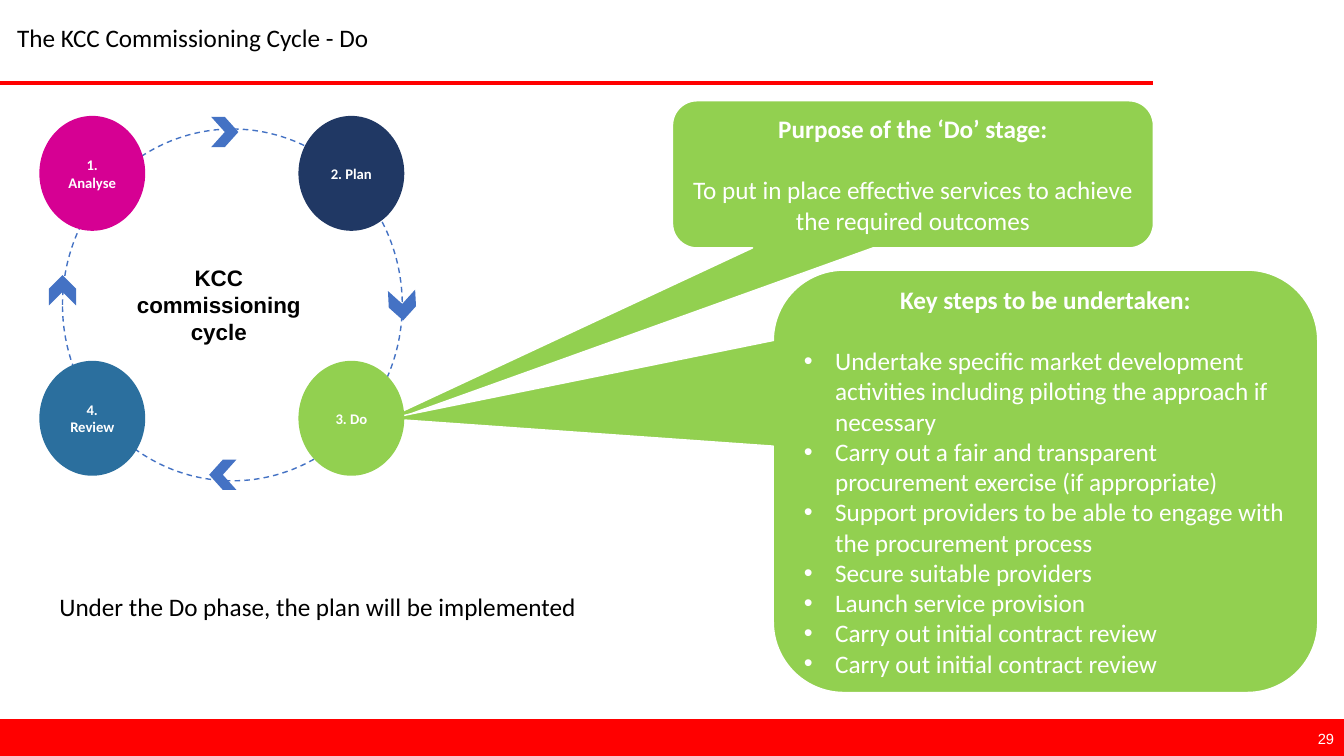
from pptx import Presentation
from pptx import util as u
from pptx.dml import color
from pptx.enum import dml, shapes, text
from pptx.oxml import ns
from lxml import etree

RED, GREEN, BLUE, WHITE, BLACK = "FF0000", "92D050", "4472C4", "FFFFFF", "000000"
KIND = shapes.MSO_SHAPE
ALIGN = text.PP_ALIGN
MID = text.MSO_ANCHOR.MIDDLE


def rgb(code):
    return color.RGBColor.from_string(code)


def inches(*nums):
    return [u.Inches(n) for n in nums]


def add_form(slide, kind, box, fill=None, line=None):
    form = slide.shapes.add_shape(kind, *inches(*box))
    form.shadow.inherit = False
    if fill:
        form.fill.solid()
        form.fill.fore_color.rgb = rgb(fill)
    else:
        form.fill.background()
    if line:
        form.line.color.rgb = rgb(line)
        form.line.width = u.Pt(1)
    else:
        form.line.fill.background()
    return form


def style(para, size, tone, bold=False, align=ALIGN.LEFT, face="Calibri"):
    para.alignment = align
    para.font.name = face
    para.font.size = u.Pt(size)
    para.font.bold = bold
    para.font.color.rgb = rgb(tone)


def add_note(slide, box, words, size, tone, wrap=True, **look):
    frame = slide.shapes.add_textbox(*inches(*box)).text_frame
    frame.word_wrap = wrap
    frame.text = words
    style(frame.paragraphs[0], size, tone, **look)


def add_dot(para):
    props = para._p.get_or_add_pPr()
    props.set("marL", str(u.Inches(0.31)))
    props.set("indent", str(-u.Inches(0.31)))
    font = etree.SubElement(props, ns.qn("a:buFont"))
    font.set("typeface", "Arial")
    etree.SubElement(props, ns.qn("a:buChar")).set("char", "•")


def add_head(slide, box, words):
    left, top, width, height = box
    title = slide.shapes.title
    title.left, title.top, title.width, title.height = inches(*box)
    frame = title.text_frame
    frame.text = words
    frame.vertical_anchor = MID
    para = frame.paragraphs[0]
    style(para, 18, BLACK)
    para.line_spacing = 0.9
    ends = inches(left - 0.08, top + 0.67, left + 11.37, top + 0.67)
    rule = slide.shapes.add_connector(shapes.MSO_CONNECTOR.STRAIGHT, *ends)
    rule.line.color.rgb = rgb(RED)
    rule.line.width = u.Pt(3)
    etree.SubElement(rule._element.spPr, ns.qn("a:effectLst"))


def add_foot(slide, box, page):
    left, top, width, height = box
    add_form(slide, KIND.RECTANGLE, box, RED, RED)
    place = (left + width - 3, top + 0.05, 3, 0.22)
    add_note(slide, place, page, 10.5, WHITE, align=ALIGN.RIGHT, face="Arial")


def add_callout(slide, box, tail, head, lines, dots=False):
    form = add_form(slide, KIND.ROUNDED_RECTANGULAR_CALLOUT, box, GREEN, WHITE)
    form.adjustments[0], form.adjustments[1] = tail
    form.adjustments[2] = 0.167
    frame = form.text_frame
    frame.word_wrap = True
    frame.vertical_anchor = MID
    frame.text = head
    style(frame.paragraphs[0], 18, WHITE, True, ALIGN.CENTER)
    for rank, words in enumerate(lines):
        para = frame.add_paragraph()
        para.text = words
        if rank == 0:
            para.space_before = u.Pt(22)
        if dots:
            add_dot(para)
        style(para, 18, WHITE, align=ALIGN.LEFT if dots else ALIGN.CENTER)


def add_cycle(slide, box):
    left, top, width, height = box
    ring = add_form(slide, KIND.OVAL, (left + 0.23, top + 0.13, 3.37, 3.49), None, BLUE)
    ring.line.dash_style = dml.MSO_LINE.DASH

    wide, high = 1.05, 1.14
    stages = [
        ("1. Analyse", "D60093", 0, 0),
        ("2. Plan", "203864", 1, 0),
        ("4. Review", "2B6F9E", 0, 1),
        ("3. Do", GREEN, 1, 1),
    ]
    for words, fill, col, row in stages:
        place = (left + col * (width - wide), top + row * (height - high), wide, high)
        frame = add_form(slide, KIND.OVAL, place, fill).text_frame
        frame.word_wrap = True
        frame.vertical_anchor = MID
        frame.text = words
        style(frame.paragraphs[0], 10.5, WHITE, True, ALIGN.CENTER)

    marks = [
        (1.84, 0.16, 0.27, 0.3, 0),
        (3.6, 1.88, 0.3, 0.27, 87),
        (1.82, 3.56, 0.27, 0.3, 180),
        (0.23, 1.73, 0.3, 0.27, 270),
    ]
    for x, y, w, h, turn in marks:
        place = (left + x - w / 2, top + y - h / 2, w, h)
        add_form(slide, KIND.CHEVRON, place, BLUE).rotation = turn

    add_note(slide, (left + 0.76, top + 1.42, 2.04, 0.91), "KCC commissioning cycle",
             16, BLACK, bold=True, align=ALIGN.CENTER, face="Arial")


def main():
    deck = Presentation()
    deck.slide_width, deck.slide_height = inches(13.33, 7.5)
    slide = deck.slides.add_slide(deck.slide_layouts[5])
    add_foot(slide, (0, 7.14, 13.33, 0.36), "29")
    add_head(slide, (0.07, 0.15, 11.5, 0.49), "The KCC Commissioning Cycle - Do")
    add_callout(slide, (6.67, 1, 4.77, 1.46), (-1.169, 1.774), "Purpose of the ‘Do’ stage:", [
        "To put in place effective services to achieve the required outcomes",
    ])
    add_callout(slide, (7.67, 2.68, 5.4, 4.19), (-1.209, -0.148), "Key steps to be undertaken:", [
        "Undertake specific market development activities including piloting the approach if necessary",
        "Carry out a fair and transparent procurement exercise (if appropriate)",
        "Support providers to be able to engage with the procurement process",
        "Secure suitable providers",
        "Launch service provision",
        "Carry out initial contract review",
        "Carry out initial contract review",
    ], dots=True)
    add_cycle(slide, (0.39, 1.15, 3.62, 3.57))
    add_note(slide, (0.49, 5.82, 5.39, 0.4), "Under the Do phase, the plan will be implemented",
             18, BLACK, wrap=False)
    deck.save("out.pptx")


if __name__ == "__main__":
    main()
